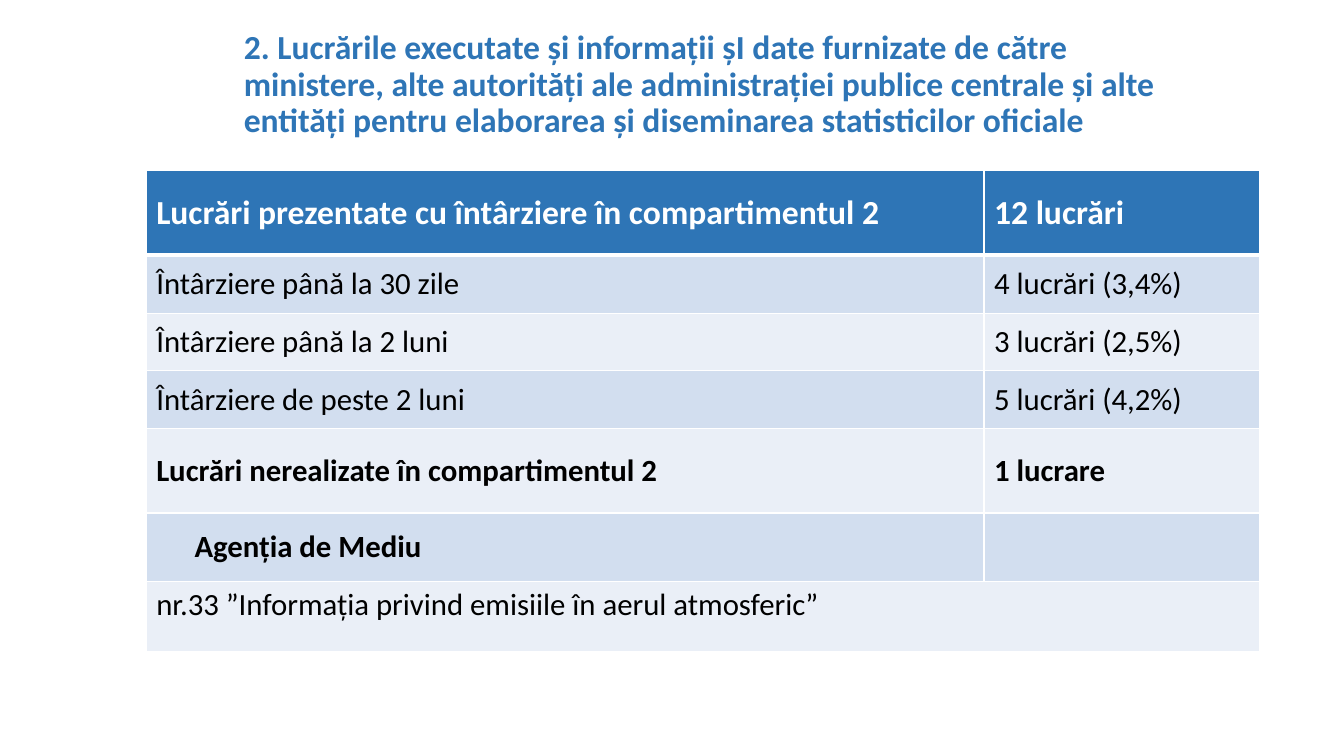
"""Build the slide on late and unfinished statistical works."""
from lxml.etree import SubElement
from pptx import Presentation
from pptx.dml.color import RGBColor
from pptx.enum.text import MSO_ANCHOR
from pptx.oxml.ns import qn
from pptx.util import Pt

PX = 9144
WHITE, BLACK, BLUE = "FFFFFF", "000000", "2E75B6"
DARK, LIGHT = "D2DEEF", "EAEFF7"


def style(para, size, bold, color):
    form = {"name": "Calibri", "size": Pt(size), "bold": bold}
    for key, value in form.items():
        setattr(para.font, key, value)
    para.font.color.rgb = RGBColor.from_string(color)


def border(cell, sides):
    props = cell._tc.get_or_add_tcPr()
    for spot, (side, width) in enumerate(sides.items()):
        line = SubElement(props, qn(f"a:ln{side}"), w=str(Pt(width)))
        fill = SubElement(line, qn("a:solidFill"))
        SubElement(fill, qn("a:srgbClr"), val=WHITE)
        props.insert(spot, line)


deck = Presentation()
deck.slide_width, deck.slide_height = 1333 * PX, 750 * PX
slide = deck.slides.add_slide(deck.slide_layouts[6])

title = slide.shapes.add_textbox(232 * PX, 30 * PX, 946 * PX, 109 * PX)
frame = title.text_frame
frame.word_wrap = True
frame.vertical_anchor = MSO_ANCHOR.MIDDLE
frame.text = (
    "2. Lucrările executate și informații șI date furnizate de către "
    "ministere, alte autorități ale administrației publice centrale și alte "
    "entități pentru elaborarea și diseminarea statisticilor oficiale"
)
frame.paragraphs[0].line_spacing = 0.9
style(frame.paragraphs[0], 24, True, BLUE)

rows = [
    (84, True, "Lucrări prezentate cu întârziere în compartimentul 2", "12 lucrări"),
    (58, False, "Întârziere până la 30 zile", "4 lucrări (3,4%)"),
    (57, False, "Întârziere până la 2 luni", "3 lucrări (2,5%)"),
    (57, False, "Întârziere de peste 2 luni", "5 lucrări (4,2%)"),
    (84, True, "Lucrări nerealizate în compartimentul 2", "1 lucrare"),
    (68, True, "Agenția de Mediu", ""),
    (70, False, "nr.33 ”Informația privind emisiile în aerul atmosferic”", ""),
]
table = slide.shapes.add_table(
    len(rows), 2, 145 * PX, 169 * PX, 1104 * PX, 478 * PX
).table
for col, width in zip(table.columns, (831, 273)):
    col.width = width * PX

for r, (height, bold, *texts) in enumerate(rows):
    table.rows[r].height = height * PX
    back = (LIGHT, DARK)[r % 2] if r else BLUE
    size, ink = (22, BLACK) if r else (24, WHITE)
    for c, text in enumerate(texts):
        cell = table.cell(r, c)
        cell.text = text
        cell.vertical_anchor = MSO_ANCHOR.MIDDLE
        cell.fill.solid()
        cell.fill.fore_color.rgb = RGBColor.from_string(back)
        style(cell.text_frame.paragraphs[0], size, bold, ink)
        top, base = 3 if r == 1 else 1, 1 if r else 3
        border(cell, {"L": 1, "R": 1, "T": top, "B": base})

agency = table.cell(5, 0).text_frame.paragraphs[0]
agency._p.get_or_add_pPr().set("marL", str(38 * PX))
note = table.cell(6, 0)
note.merge(table.cell(6, 1))
note.vertical_anchor = MSO_ANCHOR.TOP

deck.save("out.pptx")
